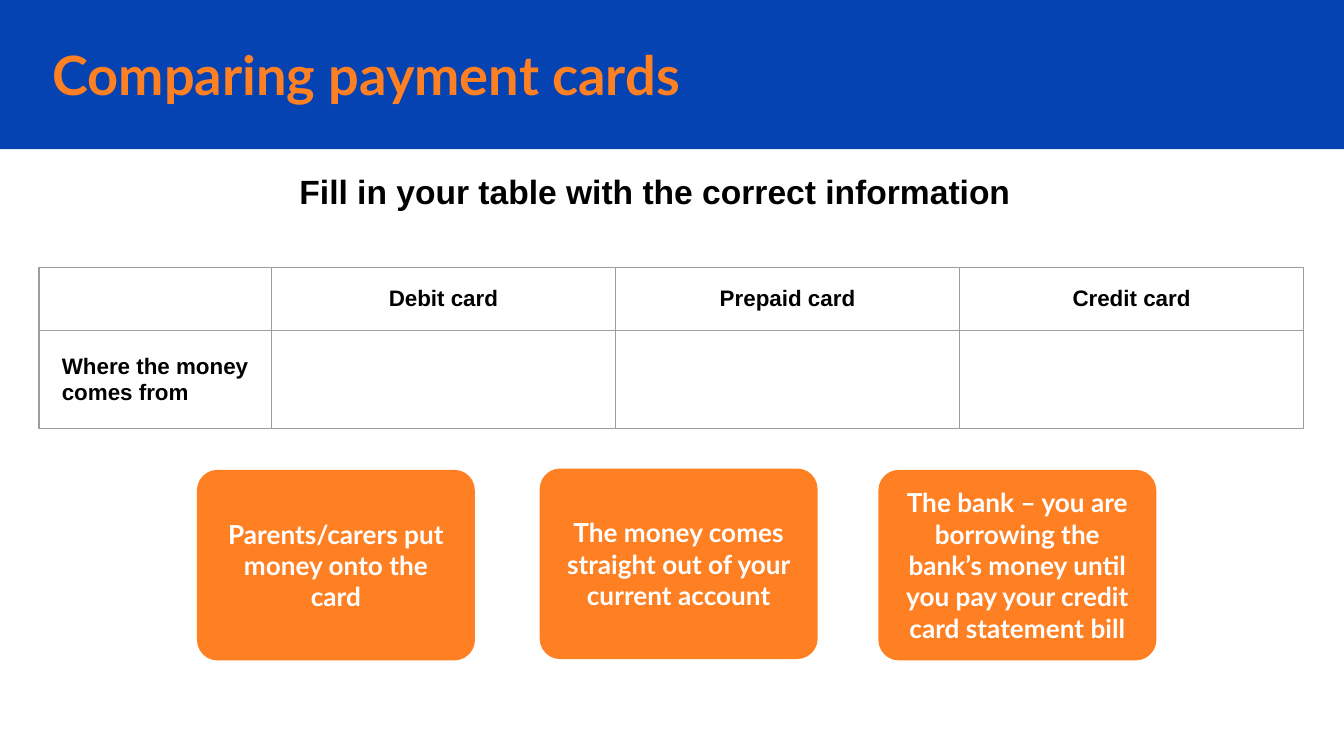
"""Build a slide that compares payment cards in a fill-in table."""
import pptx
import pptx.dml.color
import pptx.enum.shapes
import pptx.enum.text
import pptx.oxml
import pptx.oxml.ns
import pptx.util

Inches = pptx.util.Inches
Pt = pptx.util.Pt
SHAPE = pptx.enum.shapes.MSO_SHAPE
ALIGN = pptx.enum.text.PP_ALIGN
MIDDLE = pptx.enum.text.MSO_ANCHOR.MIDDLE
TOP = pptx.enum.text.MSO_ANCHOR.TOP
HUES = {"blue": "0543B3", "orange": "FF8022", "white": "FFFFFF",
        "black": "000000", "grey": "9E9E9E"}


def tint(name):
    return pptx.dml.color.RGBColor.from_string(HUES[name])


def write(frame, text, size=14, face="Lato", hue="white", align=ALIGN.CENTER):
    para = frame.paragraphs[0]
    para.alignment = align
    run = para.add_run()
    run.text = text
    run.font.size = Pt(size)
    run.font.name = face
    run.font.bold = True
    run.font.color.rgb = tint(hue)


class Deck:
    def __init__(self, wide):
        self.file = pptx.Presentation()
        self.file.slide_width = Inches(wide)
        self.file.slide_height = Inches(wide) * 9 // 16
        self.slide = self.file.slides.add_slide(self.file.slide_layouts[5])
        self.items = self.slide.shapes

    def frame(self, shape, anchor=MIDDLE):
        frame = shape.text_frame
        frame.word_wrap = True
        frame.auto_size = pptx.enum.text.MSO_AUTO_SIZE.NONE
        frame.vertical_anchor = anchor
        frame.margin_left = frame.margin_right = Inches(0.1)
        frame.margin_top = frame.margin_bottom = Inches(0.1)
        return frame

    def block(self, kind, box, hue):
        shape = self.items.add_shape(kind, *map(Inches, box))
        shape.shadow.inherit = False
        shape.fill.solid()
        shape.fill.fore_color.rgb = tint(hue)
        return shape

    def band(self, box):
        shape = self.block(SHAPE.RECTANGLE, box, "blue")
        shape.line.fill.background()
        title = self.items.title._element
        title.addprevious(shape._element)

    def title(self, text, box):
        shape = self.items.title
        shape.left, shape.top, shape.width, shape.height = map(Inches, box)
        write(self.frame(shape), text, size=29, hue="orange", align=ALIGN.LEFT)

    def label(self, text, box):
        shape = self.items.add_textbox(*map(Inches, box))
        write(self.frame(shape, TOP), text, size=18, face="Arial", hue="black")

    def card(self, text, box):
        shape = self.block(SHAPE.ROUNDED_RECTANGLE, box, "orange")
        shape.adjustments[0] = 0.1
        shape.line.color.rgb = tint("orange")
        shape.line.width = Pt(2)
        write(self.frame(shape), text)

    def edge(self, cell):
        props = cell._tc.get_or_add_tcPr()
        for spot, side in enumerate(("lnL", "lnR", "lnT", "lnB")):
            props.insert(spot, pptx.oxml.parse_xml(
                f'<a:{side} {pptx.oxml.ns.nsdecls("a")} w="{Pt(0.75)}">'
                f'<a:solidFill><a:srgbClr val="{HUES["grey"]}"/></a:solidFill>'
                f'</a:{side}>'))

    def table(self, rows, left, top, widths, heights):
        grid = self.items.add_table(
            len(rows), len(widths), Inches(left), Inches(top),
            Inches(sum(widths)), Inches(sum(heights))).table
        grid.first_row = grid.horz_banding = False
        for col, width in zip(grid.columns, widths):
            col.width = Inches(width)
        for row, height, texts in zip(grid.rows, heights, rows):
            row.height = Inches(height)
            for spot, (cell, text) in enumerate(zip(row.cells, texts)):
                cell.fill.background()
                cell.vertical_anchor = MIDDLE
                self.edge(cell)
                if spot == 0:
                    cell.margin_left = Inches(0.17)
                if text:
                    align = ALIGN.CENTER if spot else ALIGN.LEFT
                    write(cell.text_frame, text, size=12, face="Arial",
                          hue="black", align=align)


def main():
    deck = Deck(10)
    deck.band((0, 0, 10, 1.11))
    deck.title("Comparing payment cards", (0.29, 0.27, 8.46, 0.56))
    deck.table([["", "Debit card", "Prepaid card", "Credit card"],
                ["Where the money comes from", "", "", ""]],
               0.29, 1.99, [1.73] + [2.56] * 3, [0.47, 0.73])
    deck.label("Fill in your table with the correct information",
               (2.11, 1.17, 5.53, 0.5))
    cards = [
        (1.48, 3.51, "Parents/carers put money onto the card"),
        (4.03, 3.5, "The money comes straight out of your current account"),
        (6.55, 3.51, "The bank – you are borrowing the bank’s money until "
                     "you pay your credit card statement bill"),
    ]
    for left, top, text in cards:
        deck.card(text, (left, top, 2.04, 1.39))
    deck.file.save("out.pptx")


if __name__ == "__main__":
    main()
